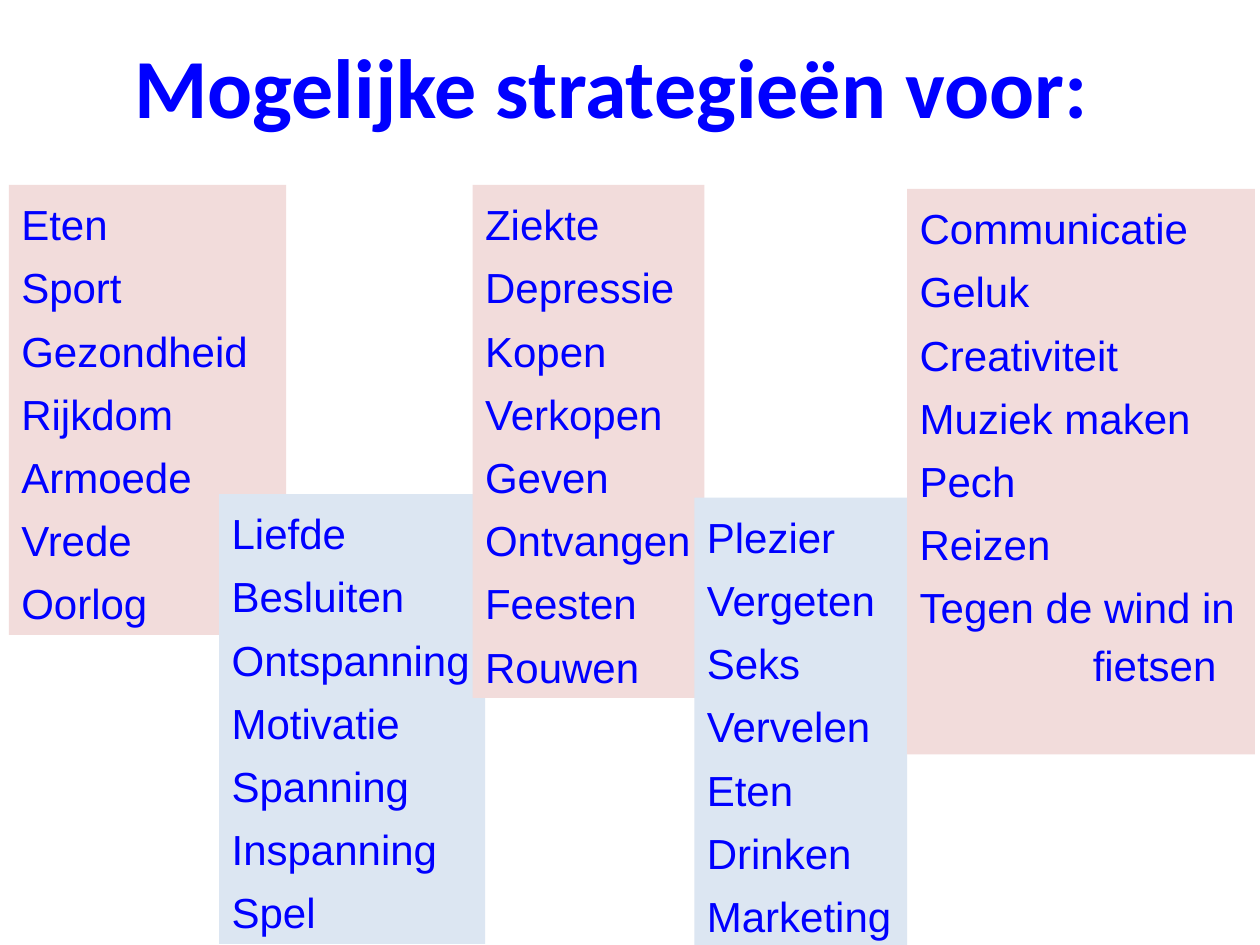
from pptx import Presentation
from pptx.dml.color import RGBColor
from pptx.enum.shapes import MSO_SHAPE
from pptx.enum.text import MSO_ANCHOR, PP_ALIGN
from pptx.util import Cm, Pt

BLUE = RGBColor(0x00, 0x00, 0xFF)
PINK = RGBColor(0xF2, 0xDC, 0xDB)
PALE_BLUE = RGBColor(0xDC, 0xE6, 0xF2)

# Left, top, width, height in cm, fill and topics, from back to front
TOPIC_LISTS = [
    (0.18, 3.73, 5.59, 9.07, PINK,
     ["Eten", "Sport", "Gezondheid", "Rijkdom", "Armoede", "Vrede", "Oorlog"]),
    (4.42, 9.96, 5.36, 9.07, PALE_BLUE,
     ["Liefde", "Besluiten", "Ontspanning", "Motivatie", "Spanning",
      "Inspanning", "Spel"]),
    (9.53, 3.73, 4.67, 10.34, PINK,
     ["Ziekte", "Depressie", "Kopen", "Verkopen", "Geven", "Ontvangen",
      "Feesten", "Rouwen"]),
    (14, 10.03, 4.29, 9.07, PALE_BLUE,
     ["Plezier", "Vergeten", "Seks", "Vervelen", "Eten", "Drinken",
      "Marketing"]),
    (18.29, 3.81, 7.01, 11.4, PINK,
     ["Communicatie", "Geluk", "Creativiteit", "Muziek maken", "Pech",
      "Reizen", "Tegen de wind in", "fietsen"]),
]


def format_font(paragraph, name, size, bold=False):
    for run in paragraph.runs:
        run.font.name = name
        run.font.size = Pt(size)
        run.font.bold = bold
        run.font.color.rgb = BLUE


def add_title(slide, text):
    title = slide.shapes.add_textbox(Cm(0.89), Cm(0.53), Cm(22.86), Cm(2.36))
    frame = title.text_frame
    frame.word_wrap = True
    frame.vertical_anchor = MSO_ANCHOR.MIDDLE
    frame.text = text
    heading = frame.paragraphs[0]
    heading.alignment = PP_ALIGN.CENTER
    format_font(heading, "Calibri", 48, bold=True)


def add_topic_list(slide, left, top, width, height, fill, topics):
    panel = slide.shapes.add_shape(
        MSO_SHAPE.RECTANGLE, Cm(left), Cm(top), Cm(width), Cm(height))
    panel.shadow.inherit = False
    panel.fill.solid()
    panel.fill.fore_color.rgb = fill
    panel.line.fill.background()
    frame = panel.text_frame
    frame.word_wrap = True
    frame.vertical_anchor = MSO_ANCHOR.TOP
    frame.text = "\n".join(topics)
    for topic in frame.paragraphs:
        topic.alignment = PP_ALIGN.LEFT
        topic.line_spacing = 1.15
        topic.space_before = Pt(3)
        format_font(topic, "Arial", 24)
    return frame


def indent_continuation(paragraph):
    paragraph.space_before = Pt(0)
    paragraph._p.get_or_add_pPr().set("marL", str(Cm(3.49)))


def main():
    presentation = Presentation()
    presentation.slide_width = Cm(25.4)
    presentation.slide_height = Cm(19.05)
    slide = presentation.slides.add_slide(presentation.slide_layouts[6])

    add_title(slide, "Mogelijke strategieën voor:")

    # Overlapping topic panels
    panels = [add_topic_list(slide, *topic_list) for topic_list in TOPIC_LISTS]

    # The last topic runs on over an indented second line
    indent_continuation(panels[-1].paragraphs[-1])

    presentation.save("out.pptx")


if __name__ == "__main__":
    main()
